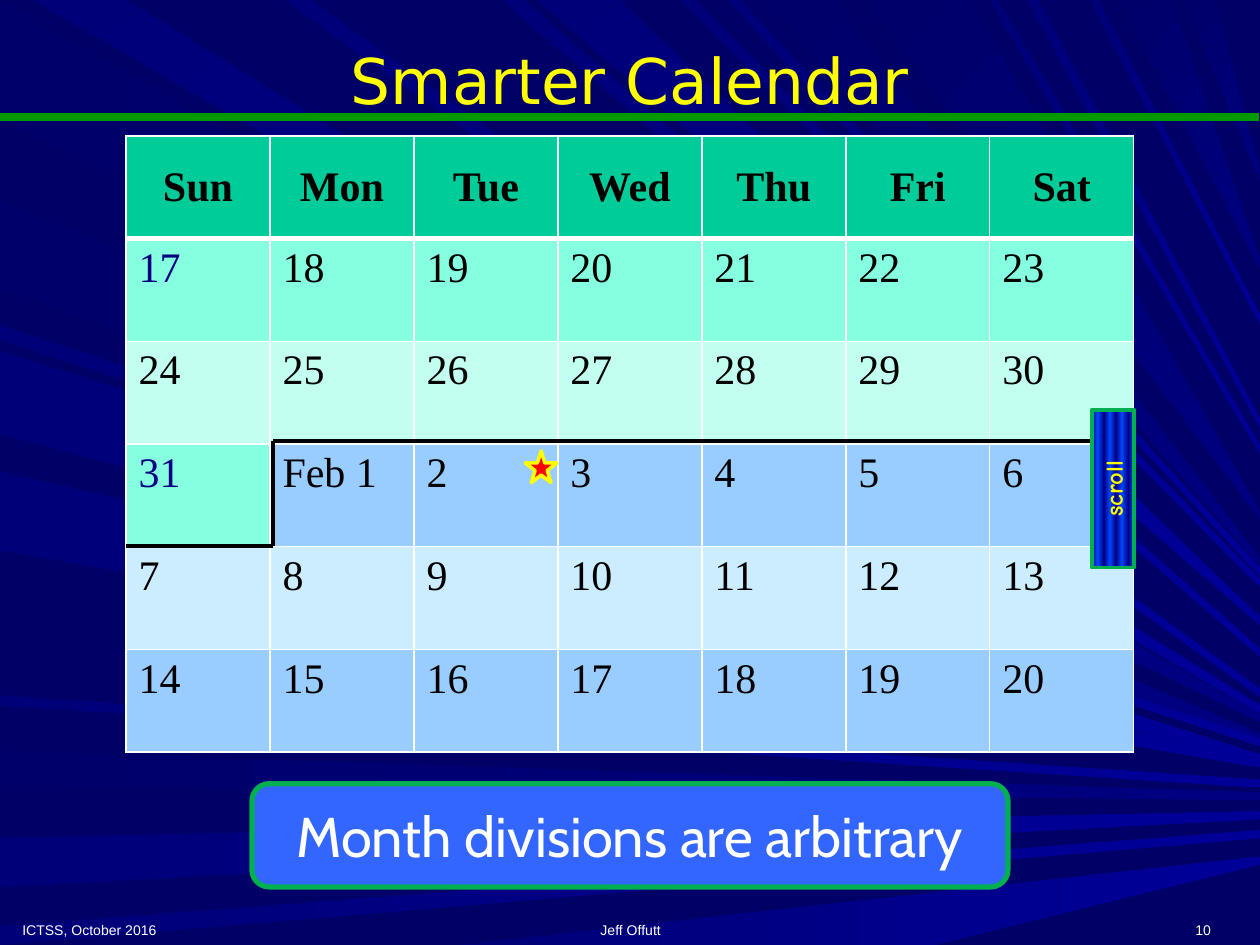
"""Builds the Smarter Calendar slide: a month-crossing calendar over a field of light rays."""
from dataclasses import dataclass
from itertools import pairwise

from lxml import etree
from pptx import Presentation
from pptx import util as u
from pptx.dml.color import RGBColor
from pptx.enum import shapes, text
from pptx.oxml import ns


@dataclass(frozen=True)
class Theme:
    background: str = "000066"
    dim_ray: tuple = ("00006B", "000080")
    bright_ray: tuple = ("000078", "000099")
    rule: str = "009900"
    yellow: str = "FFFF00"
    red: str = "FF0000"
    white: str = "FFFFFF"
    black: str = "000000"
    navy: str = "000080"
    frame: str = "00B050"
    banner: str = "3366FF"
    header: str = "00CC99"
    january: tuple = ("C2FFF0", "85FFE0")
    february: tuple = ("CCECFF", "99CCFF")
    scroll: tuple = ("000082", "0047FF")
    title_size: int = 36
    banner_size: int = 32
    table_size: int = 24
    scroll_size: int = 14
    footer_size: int = 8
    title_font: str = "DejaVu Sans"
    banner_font: str = "Cabin"
    table_font: str = "Times New Roman"
    scroll_font: str = "Comic Neue"
    footer_font: str = "Arial"


THEME = Theme()
LEFT, CENTER, RIGHT = text.PP_ALIGN.LEFT, text.PP_ALIGN.CENTER, text.PP_ALIGN.RIGHT
TOP, MIDDLE, BOTTOM = text.MSO_ANCHOR.TOP, text.MSO_ANCHOR.MIDDLE, text.MSO_ANCHOR.BOTTOM
RAY_UNIT = u.Cm(2.54) / 100
RAY_END = 1000
LEFT_DIM = [(2, 93, 570), (159, 228, 585), (596, 623, 632)]
LEFT_BRIGHT = [(665, 704, 647), (735, 750, 662), (258, 270, 589), (278, 345, 602),
               (374, 437, 606), (552, 560, 622)]
TOP_DIM = [(606, 661, 446), (686, 770, 409), (887, 930, 210), (939, 964, 140)]
TOP_BRIGHT = [(26, 101, 563), (225, 247, 550), (398, 416, 518), (426, 492, 493),
              (540, 552, 463), (577, 588, 454), (785, 792, 357), (815, 824, 336), (865, 872, 254)]
BOTTOM_BRIGHT = [(364, 742, 683)]


def rgb(colour):
    return RGBColor.from_string(colour)


def paint(fill, colour):
    fill.solid()
    fill.fore_color.rgb = rgb(colour)


def paint_gradient(shape, stops, angle):
    shape.fill.gradient()
    shape.fill.gradient_angle = -angle % 360
    stop_list = shape._element.spPr.find(ns.qn("a:gradFill")).find(ns.qn("a:gsLst"))
    stop_list.clear()
    for position, colour in stops:
        stop = etree.SubElement(stop_list, ns.qn("a:gs"), pos=str(position * 1000))
        etree.SubElement(stop, ns.qn("a:srgbClr"), val=colour)


def write(frame, content, font, size, colour, alignment=LEFT, bold=False):
    paragraph = frame.paragraphs[0]
    paragraph.alignment = alignment
    run = paragraph.add_run()
    run.text = content
    run.font.name = font
    run.font.size = u.Pt(size)
    run.font.bold = bold
    run.font.color.rgb = rgb(colour)


def add_ray(slide, start, finish, tip, colours, angle):
    builder = slide.shapes.build_freeform(*start, scale=RAY_UNIT)
    builder.add_line_segments([finish, (RAY_END, tip + 3), (RAY_END, tip - 3)], close=True)
    ray = builder.convert_to_shape()
    ray.shadow.inherit = False
    ray.line.fill.background()
    paint_gradient(ray, zip((0, 100), colours), angle)


def add_rays(slide):
    for colours, left_rays, top_rays in (
        (THEME.dim_ray, LEFT_DIM, TOP_DIM),
        (THEME.bright_ray, LEFT_BRIGHT, TOP_BRIGHT),
    ):
        for upper, lower, tip in left_rays:
            add_ray(slide, (0, upper), (0, lower), tip, colours, 0)
        for near, far, tip in top_rays:
            add_ray(slide, (far, 0), (near, 0), tip, colours, 45)
    for near, far, tip in BOTTOM_BRIGHT:
        add_ray(slide, (near, 750), (far, 750), tip, THEME.bright_ray, 0)


def add_line(slide, start, end, colour, width):
    ends = [u.Cm(value) for value in (*start, *end)]
    line = slide.shapes.add_connector(shapes.MSO_CONNECTOR.STRAIGHT, *ends)
    line.line.color.rgb = rgb(colour)
    line.line.width = u.Pt(width)
    etree.SubElement(line._element.spPr, ns.qn("a:effectLst"))


def add_box(slide, kind, place, fill, outline, width):
    shape = slide.shapes.add_shape(kind, *map(u.Cm, place))
    shape.shadow.inherit = False
    paint(shape.fill, fill)
    shape.line.color.rgb = rgb(outline)
    shape.line.width = u.Pt(width)
    shape.text_frame.vertical_anchor = MIDDLE
    return shape


def add_footer(slide, content, left, width, alignment):
    place = map(u.Cm, (left, 18.2, width, 0.84))
    frame = slide.shapes.add_textbox(*place).text_frame
    frame.word_wrap = True
    frame.vertical_anchor = BOTTOM
    write(frame, content, THEME.footer_font, THEME.footer_size, THEME.white, alignment)


def set_title(slide, content):
    title = slide.shapes.title
    title.left, title.top, title.width, title.height = map(u.Cm, (0.2, 0, 25, 3.18))
    title.text_frame.vertical_anchor = MIDDLE
    write(title.text_frame, content, THEME.title_font, THEME.title_size, THEME.yellow, CENTER)
    slide.shapes._spTree.append(title._element)


def set_borders(cell, top, bottom):
    properties = cell._tc.get_or_add_tcPr()
    widths = {"a:lnL": 1, "a:lnR": 1, "a:lnT": top, "a:lnB": bottom}
    for index, (tag, width) in enumerate(widths.items()):
        border = etree.Element(ns.qn(tag), w=str(u.Pt(width)))
        fill = etree.SubElement(border, ns.qn("a:solidFill"))
        etree.SubElement(fill, ns.qn("a:srgbClr"), val=THEME.white)
        properties.insert(index, border)


def add_calendar(slide):
    names = ["Sun", "Mon", "Tue", "Wed", "Thu", "Fri", "Sat"]
    january = list(range(17, 32))
    days = names + january + ["Feb 1"] + list(range(2, 21))
    place = map(u.Cm, (2.54, 2.74, 20.32, 12.42))
    table = slide.shapes.add_table(len(days) // 7, 7, *place).table
    for index, day in enumerate(days):
        row, column = divmod(index, 7)
        cell = table.cell(row, column)
        header = row == 0
        in_january = index < len(names + january)
        bands = THEME.january if in_january else THEME.february
        paint(cell.fill, THEME.header if header else bands[row % 2])
        set_borders(cell, 3 if row == 1 else 1, 3 if header else 1)
        cell.vertical_anchor = MIDDLE if header else TOP
        marked = in_january and day in (january[0], january[-1])
        write(cell.text_frame, str(day), THEME.table_font, THEME.table_size,
              THEME.navy if marked else THEME.black, CENTER if header else LEFT, header)


def add_scroll(slide):
    bar = add_box(slide, shapes.MSO_SHAPE.RECTANGLE, (20.85, 9.42, 3.18, 0.86),
                  THEME.scroll[0], THEME.frame, 2.25)
    bar.rotation = 270
    paint_gradient(bar, [(round(i * 100 / 7), THEME.scroll[i % 2]) for i in range(8)], 90)
    write(bar.text_frame, "scroll", THEME.scroll_font, THEME.scroll_size, THEME.yellow, CENTER, True)


def main():
    presentation = Presentation()
    presentation.slide_width, presentation.slide_height = u.Cm(25.4), u.Cm(19.05)
    slide = presentation.slides.add_slide(presentation.slide_layouts[5])
    paint(slide.background.fill, THEME.background)
    add_rays(slide)
    add_line(slide, (0, 2.36), (25.37, 2.36), THEME.rule, 4.5)
    set_title(slide, "Smarter Calendar")
    add_footer(slide, "ICTSS, October 2016", 0.2, 5.92, LEFT)
    add_footer(slide, "Jeff Offutt", 8.69, 8.05, CENTER)
    add_footer(slide, "10", 19.25, 5.41, RIGHT)
    add_calendar(slide)
    add_box(slide, shapes.MSO_SHAPE.STAR_5_POINT, (10.59, 9.09, 0.64, 0.64),
            THEME.red, THEME.yellow, 2)
    for start, end in pairwise([(2.54, 11), (5.51, 11), (5.51, 8.89), (22.86, 8.89)]):
        add_line(slide, start, end, THEME.black, 2.25)
    add_scroll(slide)
    banner = add_box(slide, shapes.MSO_SHAPE.ROUNDED_RECTANGLE, (5.08, 15.8, 15.24, 2.08),
                     THEME.banner, THEME.frame, 3)
    write(banner.text_frame, "Month divisions are arbitrary", THEME.banner_font,
          THEME.banner_size, THEME.white, CENTER)
    presentation.save("out.pptx")


if __name__ == "__main__":
    main()
